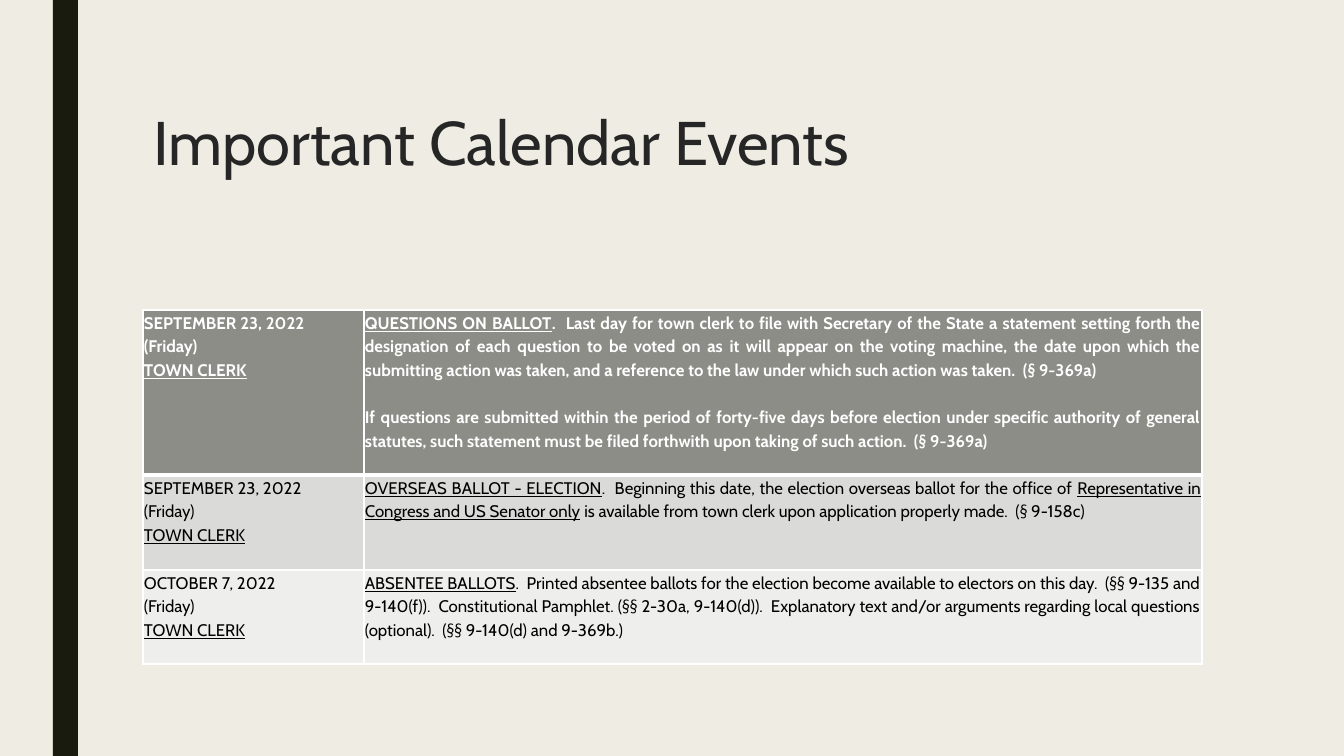
"""Build the slide of important election calendar events."""
from lxml import etree
from pptx import Presentation
from pptx import util as u
from pptx.dml.color import RGBColor
from pptx.enum import shapes, text
from pptx.oxml import ns

PX = 914400 / 100.8
FONT = "Cabin"
CREAM = RGBColor(0xEF, 0xED, 0xE3)
OLIVE = RGBColor(0x19, 0x1B, 0x0E)
CHARCOAL = RGBColor(0x26, 0x26, 0x26)
BLACK = RGBColor(0x00, 0x00, 0x00)
WHITE = RGBColor(0xFF, 0xFF, 0xFF)
HEADER_GREY = RGBColor(0x8C, 0x8D, 0x86)
MID_GREY = RGBColor(0xDA, 0xDB, 0xD9)
PALE_GREY = RGBColor(0xEE, 0xEE, 0xED)

COLUMN_WIDTHS = (221, 838)
ROW_HEIGHTS = (165, 95, 94)
ROW_FILLS = (HEADER_GREY, MID_GREY, PALE_GREY)
BLANK_LINE = 16.8
EVENTS = [
    ("SEPTEMBER 23, 2022", [
        [("QUESTIONS ON BALLOT", True),
         (".  Last day for town clerk to file with Secretary of the State a statement setting forth "
          "the designation of each question to be voted on as it will appear on the voting machine, "
          "the date upon which the submitting action was taken, and a reference to the law under "
          "which such action was taken.  (§ 9-369a)", False)],
        [("If questions are submitted within the period of forty-five days before election under "
          "specific authority of general statutes, such statement must be filed forthwith upon "
          "taking of such action.  (§ 9-369a)", False)],
    ]),
    ("SEPTEMBER 23, 2022", [
        [("OVERSEAS BALLOT - ELECTION", True),
         (".  Beginning this date, the election overseas ballot for the office of ", False),
         ("Representative in Congress and US Senator only", True),
         (" is available from town clerk upon application properly made.  (§ 9-158c)", False)],
    ]),
    ("OCTOBER 7, 2022", [
        [("ABSENTEE BALLOTS", True),
         (".  Printed absentee ballots for the election become available to electors on this day.  "
          "(§§ 9-135 and 9-140(f)).  Constitutional Pamphlet. (§§ 2-30a, 9-140(d)).  Explanatory text "
          "and/or arguments regarding local questions (optional).  (§§ 9-140(d) and 9-369b.)", False)],
    ]),
]


def px(length):
    """Turn pixels into EMU."""
    return u.Emu(round(length * PX))


def add_run(paragraph, words, size=12, color=BLACK, bold=False, underline=False):
    """Append formatted text to a paragraph."""
    run = paragraph.add_run()
    run.text = words
    font = run.font
    font.name, font.size = FONT, u.Pt(size)
    font.color.rgb = color
    font.bold, font.underline = bold, underline


def add_bar(slide, left, top, width, height, color):
    """Draw a plain filled rectangle."""
    bar = slide.shapes.add_shape(
        shapes.MSO_SHAPE.RECTANGLE, px(left), px(top), px(width), px(height))
    bar.shadow.inherit = False
    bar.fill.solid()
    bar.fill.fore_color.rgb = color
    bar.line.fill.background()


def format_title(slide, words):
    """Place and fill the title placeholder."""
    title = slide.shapes.title
    title.left, title.top, title.width, title.height = px(143), px(108), px(1058), px(144)
    frame = title.text_frame
    frame.auto_size = text.MSO_AUTO_SIZE.NONE
    frame.vertical_anchor = text.MSO_ANCHOR.TOP
    paragraph = frame.paragraphs[0]
    paragraph.alignment = text.PP_ALIGN.LEFT
    paragraph.line_spacing = 0.89
    add_run(paragraph, words, size=44, color=CHARCOAL)


def set_borders(cell, top, bottom):
    """Give a cell white borders, with top and bottom widths in points."""
    properties = cell._tc.get_or_add_tcPr()
    for side, width in (("L", 1), ("R", 1), ("T", top), ("B", bottom)):
        line = etree.SubElement(properties, ns.qn(f"a:ln{side}"), w=str(u.Pt(width)))
        fill = etree.SubElement(line, ns.qn("a:solidFill"))
        etree.SubElement(fill, ns.qn("a:srgbClr"), val=str(WHITE))


def fill_cell(cell, paragraphs, alignment, background, **font):
    """Write paragraphs of (words, underline) parts into a coloured cell."""
    cell.margin_left = cell.margin_right = px(1)
    cell.margin_top = cell.margin_bottom = 0
    cell.fill.solid()
    cell.fill.fore_color.rgb = background
    frame = cell.text_frame
    for index, parts in enumerate(paragraphs):
        paragraph = frame.add_paragraph() if index else frame.paragraphs[0]
        paragraph.alignment = alignment
        paragraph.line_spacing = 1.15
        if index and alignment == text.PP_ALIGN.JUSTIFY:
            paragraph.space_before = u.Pt(BLANK_LINE)
        for words, underline in parts:
            add_run(paragraph, words, underline=underline, **font)


def add_event_table(slide):
    """Add the table of dates and events."""
    table = slide.shapes.add_table(
        len(EVENTS), len(COLUMN_WIDTHS), px(143), px(310),
        px(sum(COLUMN_WIDTHS)), px(sum(ROW_HEIGHTS))).table
    for column, width in zip(table.columns, COLUMN_WIDTHS):
        column.width = px(width)
    for index, (date, details) in enumerate(EVENTS):
        table.rows[index].height = px(ROW_HEIGHTS[index])
        header = index == 0
        font = {"color": WHITE if header else BLACK, "bold": header}
        deadline = [[(date, False)], [("(Friday)", False)], [("TOWN CLERK", True)]]
        contents = ((deadline, text.PP_ALIGN.LEFT), (details, text.PP_ALIGN.JUSTIFY))
        for column, (paragraphs, alignment) in enumerate(contents):
            cell = table.cell(index, column)
            set_borders(cell, top=3 if index == 1 else 1, bottom=3 if header else 1)
            fill_cell(cell, paragraphs, alignment, ROW_FILLS[index], **font)


def main():
    """Build and save the presentation."""
    presentation = Presentation()
    presentation.slide_width, presentation.slide_height = px(1344), px(756)
    slide = presentation.slides.add_slide(presentation.slide_layouts[5])
    slide.background.fill.solid()
    slide.background.fill.fore_color.rgb = CREAM
    add_bar(slide, 53, 0, 25, 756, OLIVE)
    format_title(slide, "Important Calendar Events")
    add_event_table(slide)
    presentation.save("out.pptx")


if __name__ == "__main__":
    main()
